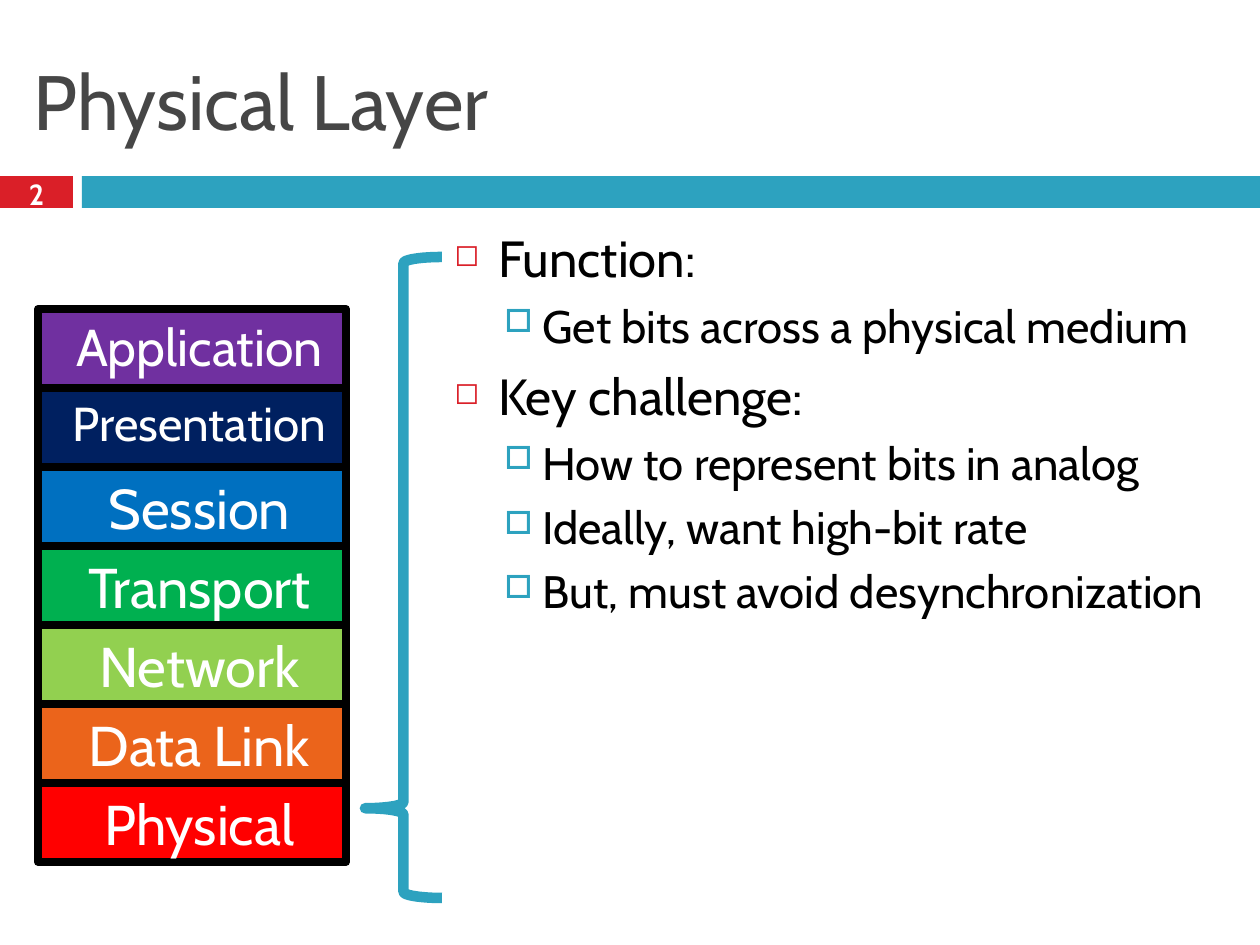
from dataclasses import dataclass

from lxml import etree
from pptx import Presentation
from pptx.dml.color import RGBColor
from pptx.enum.shapes import MSO_SHAPE
from pptx.enum.text import MSO_ANCHOR, PP_ALIGN
from pptx.oxml.ns import qn
from pptx.util import Emu, Pt

RECTANGLE = MSO_SHAPE.RECTANGLE
LEFT_BRACE = MSO_SHAPE.LEFT_BRACE
TOP, MIDDLE = MSO_ANCHOR.TOP, MSO_ANCHOR.MIDDLE
LEFT, CENTER = PP_ALIGN.LEFT, PP_ALIGN.CENTER
PX_PER_INCH = 126


@dataclass(frozen=True)
class Theme:
    font: str = "Cabin"
    title: str = "464646"
    text: str = "000000"
    light: str = "FFFFFF"
    outline: str = "000000"
    red: str = "DA1F28"
    teal: str = "2DA2BF"
    title_size: float = 44
    number_size: float = 16.6
    layer_size: float = 32
    layer_line: float = 4.5
    brace_line: float = 6


THEME = Theme()

BULLET_LEVELS = [
    {"size": 29, "before": 7, "margin": 44, "indent": -44,
     "glyph": "◻", "color": THEME.red, "percent": 60},
    {"size": 26, "before": 5.5, "margin": 88, "indent": -38,
     "glyph": "□", "color": THEME.teal, "percent": 70},
]

BULLETS = [
    (0, "Function:"),
    (1, "Get bits across a physical medium"),
    (0, "Key challenge:"),
    (1, "How to represent bits in analog"),
    (1, "Ideally, want high-bit rate"),
    (1, "But, must avoid desynchronization"),
]

LAYERS = [
    ("Application", "7030A0", 29.6),
    ("Presentation", "002060", 27.2),
    ("Session", "0070C0", THEME.layer_size),
    ("Transport", "00B050", THEME.layer_size),
    ("Network", "92D050", THEME.layer_size),
    ("Data Link", "EB641B", THEME.layer_size),
    ("Physical", "FF0000", THEME.layer_size),
]


def px(length):
    return Emu(round(length * 914400 / PX_PER_INCH))


def set_values(target, values):
    for name, value in values.items():
        setattr(target, name, value)


def add_span(para, text, size, color, bold=False):
    span = para.add_run()
    span.text = text
    set_values(span.font, {"name": THEME.font, "size": Pt(size), "bold": bold})
    span.font.color.rgb = RGBColor.from_string(color)


def set_indent(para, margin, indent=0):
    properties = para._p.get_or_add_pPr()
    properties.set("marL", str(px(margin)))
    properties.set("indent", str(px(indent)))
    return properties


def add_bullet(para, style):
    properties = set_indent(para, style["margin"], style["indent"])
    color = etree.SubElement(properties, qn("a:buClr"))
    etree.SubElement(color, qn("a:srgbClr"), val=style["color"])
    etree.SubElement(properties, qn("a:buSzPct"), val=str(style["percent"] * 1000))
    etree.SubElement(properties, qn("a:buChar"), char=style["glyph"])


def add_text_box(page, bounds, anchor):
    box = page.shapes.add_textbox(*map(px, bounds))
    set_values(box.text_frame, {"word_wrap": True, "vertical_anchor": anchor})
    return box.text_frame


def add_label(page, bounds, text, size, color, align=LEFT, bold=False):
    para = add_text_box(page, bounds, MIDDLE).paragraphs[0]
    para.alignment = align
    add_span(para, text, size, color, bold)


def add_block(page, kind, bounds, fill=None, line=None, width=0):
    block = page.shapes.add_shape(kind, *map(px, bounds))
    block.shadow.inherit = False
    if fill:
        block.fill.solid()
        block.fill.fore_color.rgb = RGBColor.from_string(fill)
    else:
        block.fill.background()
    if line:
        block.line.color.rgb = RGBColor.from_string(line)
        block.line.width = Pt(width)
        etree.SubElement(block.line._get_or_add_ln(), qn("a:round"))
    else:
        block.line.fill.background()
    return block


def add_layer_stack(page, left, top, width, height):
    for index, (name, fill, size) in enumerate(LAYERS):
        bounds = (left, top + index * height, width, height)
        block = add_block(page, RECTANGLE, bounds, fill, THEME.outline, THEME.layer_line)
        set_values(block.text_frame, {"word_wrap": True, "vertical_anchor": TOP})
        para = block.text_frame.paragraphs[0]
        para.alignment = CENTER
        set_indent(para, 15)
        add_span(para, name, size, THEME.light)


def add_bullet_list(page, bounds):
    frame = add_text_box(page, bounds, TOP)
    for index, (level, text) in enumerate(BULLETS):
        style = BULLET_LEVELS[level]
        para = frame.add_paragraph() if index else frame.paragraphs[0]
        set_values(para, {"level": level, "space_before": Pt(style["before"])})
        add_bullet(para, style)
        add_span(para, text, style["size"], THEME.text)


def add_brace(page, bounds):
    brace = add_block(page, LEFT_BRACE, bounds, line=THEME.teal, width=THEME.brace_line)
    brace.adjustments[0] = 0.08
    brace.adjustments[1] = 0.86


def main():
    deck = Presentation()
    set_values(deck, {"slide_width": px(1260), "slide_height": px(945)})
    page = deck.slides.add_slide(deck.slide_layouts[6])
    add_block(page, RECTANGLE, (0, 176, 73, 32), THEME.red)
    add_block(page, RECTANGLE, (82, 176, 1178, 32), THEME.teal)
    add_label(page, (21, 32, 1218, 136), "Physical Layer", THEME.title_size, THEME.title)
    add_label(page, (0, 173, 73, 42), "2", THEME.number_size, THEME.light, CENTER, True)
    add_bullet_list(page, (442, 221, 818, 703))
    add_layer_stack(page, 38, 309, 308, 79)
    add_brace(page, (365, 257, 77, 641))
    deck.save("out.pptx")


if __name__ == "__main__":
    main()
